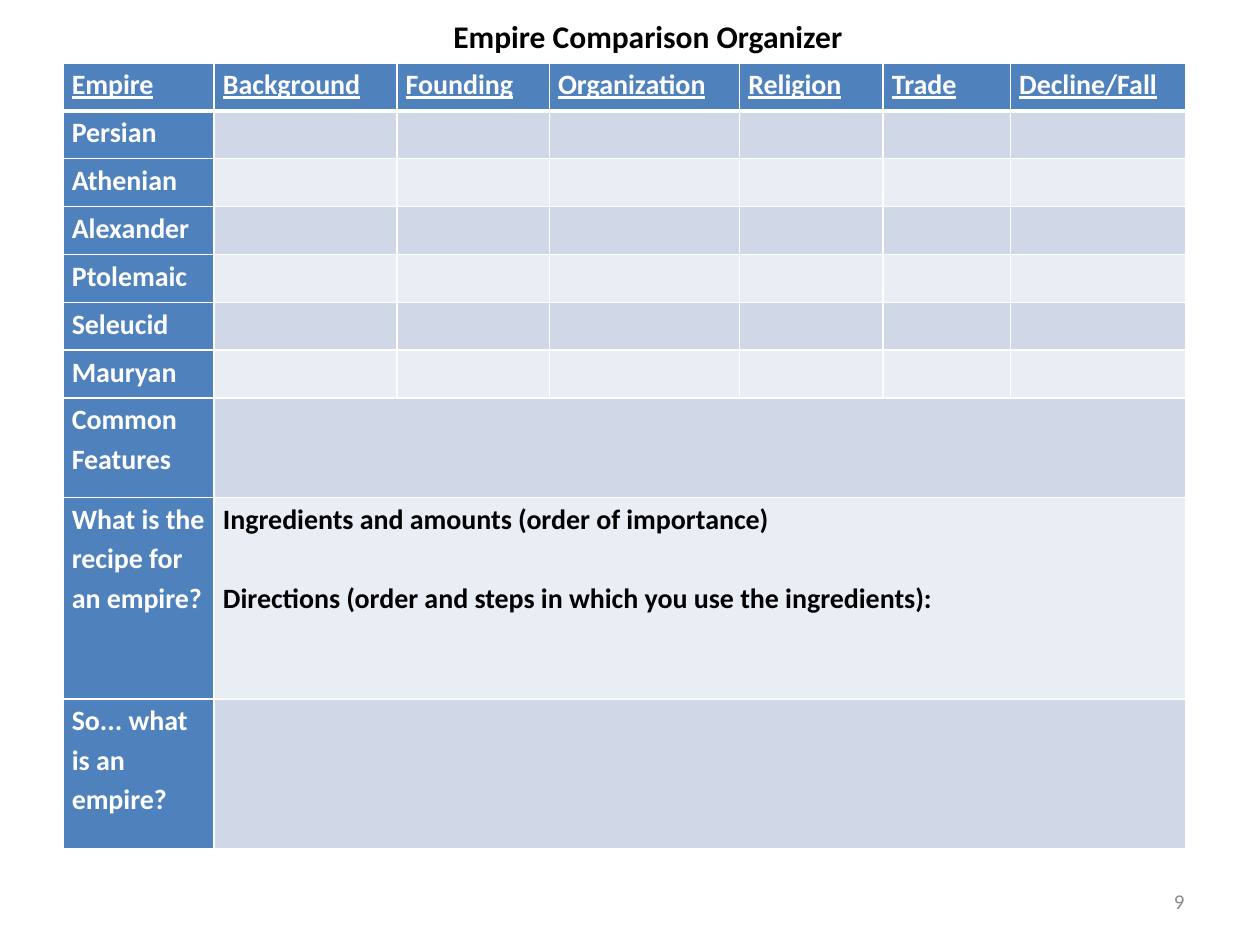
from dataclasses import dataclass

from lxml import etree
from pptx import Presentation
from pptx.dml.color import RGBColor
from pptx.enum.text import MSO_ANCHOR, MSO_AUTO_SIZE, PP_ALIGN
from pptx.oxml.ns import qn
from pptx.util import Inches, Pt

LEFT, RIGHT = PP_ALIGN.LEFT, PP_ALIGN.RIGHT
TOP, MIDDLE = MSO_ANCHOR.TOP, MSO_ANCHOR.MIDDLE
GROW = MSO_AUTO_SIZE.SHAPE_TO_FIT_TEXT

WIDE, HIGH = 10, 7.5
COLS = [1.2, 1.45, 1.21, 1.51, 1.14, 1.01, 1.39]
ROWS = [0.38] * 7 + [0.79, 1.6, 1.19]
HEADS = ["Empire", "Background", "Founding", "Organization",
         "Religion", "Trade", "Decline/Fall"]
SIDES = ["Persian", "Athenian", "Alexander", "Ptolemaic", "Seleucid", "Mauryan",
         "Common Features", "What is the recipe for an empire?",
         "So... what is an empire?"]
MERGED = [7, 8, 9]
RECIPE = ("Ingredients and amounts (order of importance)\n"
          "Directions (order and steps in which you use the ingredients):")


@dataclass
class Theme:
    font: str = "Calibri"
    title: int = 18
    body: int = 16
    small: int = 12
    gap: float = 22.5
    head: str = "4F81BD"
    dark: str = "D0D8E8"
    light: str = "E9EDF4"
    white: str = "FFFFFF"
    black: str = "000000"
    grey: str = "8C8C8C"


THEME = Theme()


def style(para, size, color, bold=True, line=False):
    for run in para.runs:
        font = run.font
        font.name, font.size = THEME.font, Pt(size)
        font.bold, font.underline = bold, line
        font.color.rgb = RGBColor.from_string(color)


def add_label(slide, words, box, size, color, bold, align=LEFT, anchor=TOP):
    x, y, w, h = box
    label = slide.shapes.add_textbox(Inches(x * WIDE), Inches(y * HIGH),
                                     Inches(w * WIDE), Inches(h * HIGH))
    frame = label.text_frame
    frame.text = words
    frame.vertical_anchor = anchor
    para = frame.paragraphs[0]
    para.alignment = align
    style(para, size, color, bold)
    return frame


def set_edges(cell, top, bottom):
    props = cell._tc.get_or_add_tcPr()
    for side, width in zip("LRTB", (1, 1, top, bottom)):
        line = etree.SubElement(props, qn(f"a:ln{side}"), w=str(Pt(width)))
        fill = etree.SubElement(line, qn("a:solidFill"))
        etree.SubElement(fill, qn("a:srgbClr"), val=THEME.white)


def fill_cell(cell, color, words="", ink=THEME.white, line=False):
    cell.margin_left = cell.margin_right = Inches(0.07)
    cell.margin_top = cell.margin_bottom = 0
    cell.fill.solid()
    cell.fill.fore_color.rgb = RGBColor.from_string(color)
    if words:
        cell.text_frame.text = words
        for para in cell.text_frame.paragraphs:
            para.line_spacing = 1.15
            style(para, THEME.body, ink, line=line)


def add_grid(slide):
    table = slide.shapes.add_table(
        len(ROWS), len(COLS), Inches(WIDE / 20), Inches(HIGH / 15),
        Inches(sum(COLS)), Inches(sum(ROWS))).table
    for col, width in zip(table.columns, COLS):
        col.width = Inches(width)
    for row, height in zip(table.rows, ROWS):
        row.height = Inches(height)
    for r in range(len(ROWS)):
        band = THEME.dark if r % 2 else THEME.light
        for c in range(len(COLS)):
            cell = table.cell(r, c)
            set_edges(cell, 3 if r == 1 else 1, 3 if r == 0 else 1)
            if r == 0:
                fill_cell(cell, THEME.head, HEADS[c], line=True)
            elif c == 0:
                fill_cell(cell, THEME.head, SIDES[r - 1])
            else:
                fill_cell(cell, band)
    for r in MERGED:
        table.cell(r, 1).merge(table.cell(r, len(COLS) - 1))
    recipe = table.cell(8, 1)
    fill_cell(recipe, THEME.light, RECIPE, THEME.black)
    recipe.text_frame.paragraphs[1].space_before = Pt(THEME.gap)


def main():
    deck = Presentation()
    deck.slide_width, deck.slide_height = Inches(WIDE), Inches(HIGH)
    slide = deck.slides.add_slide(deck.slide_layouts[6])
    page = add_label(slide, "9", (0.717, 0.927, 0.233, 0.053), THEME.small,
                     THEME.grey, False, RIGHT, MIDDLE)
    page.word_wrap = True
    add_grid(slide)
    title = add_label(slide, "Empire Comparison Organizer",
                      (0.35, 0.011, 0.337, 0.053), THEME.title, THEME.black, True)
    title.word_wrap = False
    title.auto_size = GROW
    deck.save("out.pptx")


if __name__ == "__main__":
    main()
